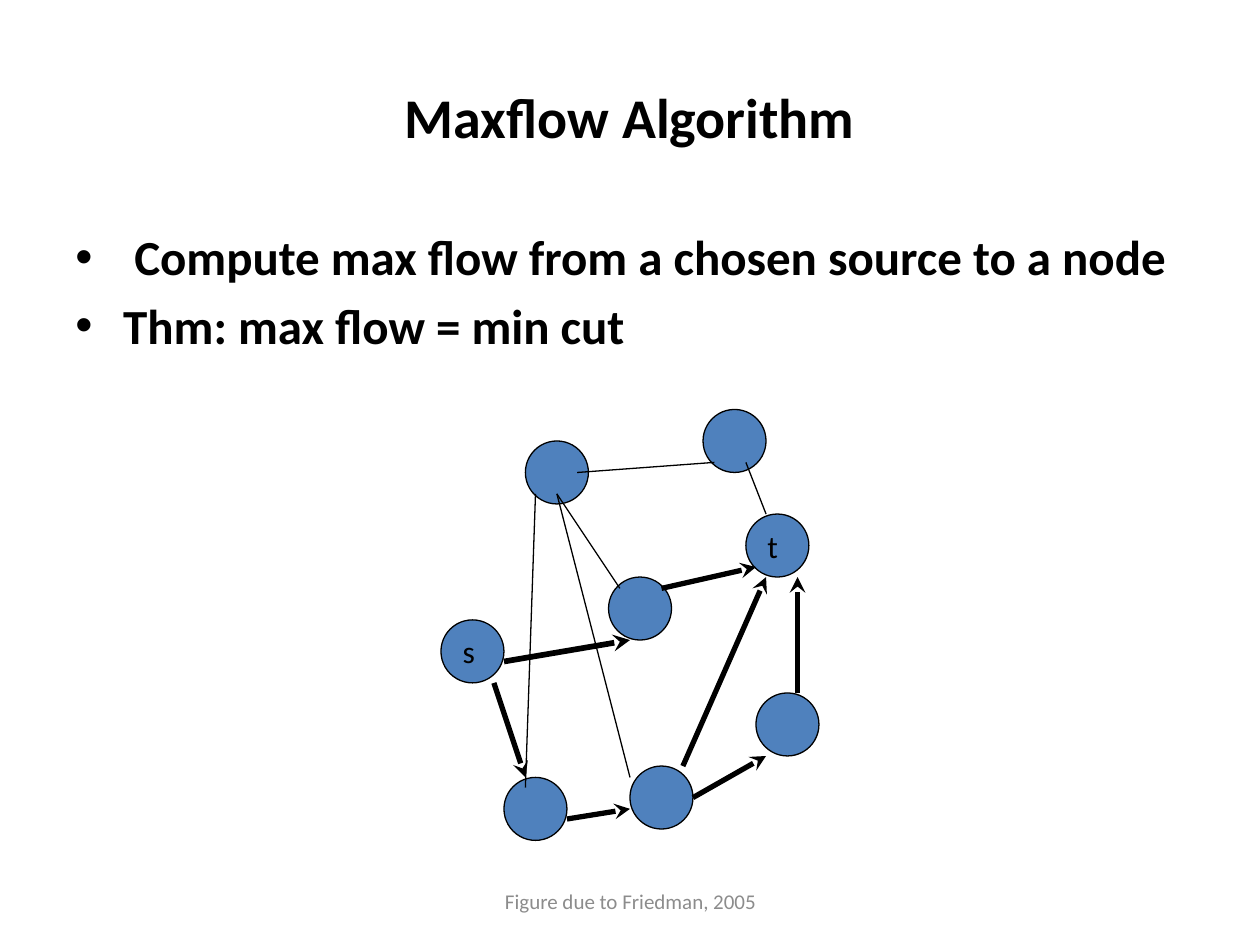
import dataclasses

import lxml.etree
import pptx
import pptx.dml.color
import pptx.enum.shapes
import pptx.enum.text
import pptx.oxml.ns
import pptx.util

Inches = pptx.util.Inches
Pt = pptx.util.Pt
ALIGN = pptx.enum.text.PP_ALIGN
ANCHOR = pptx.enum.text.MSO_ANCHOR


@dataclasses.dataclass(frozen=True)
class Theme:
    font: str = "Calibri"
    ink: str = "000000"
    node: str = "4F81BD"
    muted: str = "8C8C8C"
    title: int = 32
    body: int = 28
    label: int = 18
    caption: int = 12
    thin: float = 0.75
    thick: float = 3
    heavy: float = 3.25


THEME = Theme()
NODE_SIZE = 0.5
INDENT = 0.38

NODES = [
    (3.5, 4.92, "s"),
    (4.17, 3.5, ""),
    (4, 6.17, ""),
    (5.92, 4.08, "t"),
    (5, 6.08, ""),
    (4.83, 4.58, ""),
    (6, 5.5, ""),
    (5.58, 3.25, ""),
]
EDGES = [
    ((4.58, 3.75), (5.67, 3.67)),
    ((4.42, 3.92), (4.92, 4.67)),
    ((4.42, 3.92), (5, 6.17)),
    ((4.25, 3.92), (4.17, 6.25)),
    ((5.92, 3.67), (6.08, 4.08)),
]
FLOWS = [
    ((4, 5.25), (5, 5.08), THEME.heavy),
    ((3.92, 5.42), (4.17, 6.17), THEME.thick),
    ((4.5, 6.5), (5, 6.42), THEME.thick),
    ((5.42, 6.08), (6.08, 4.58), THEME.thick),
    ((5.5, 6.33), (6.08, 6), THEME.thick),
    ((6.33, 5.5), (6.33, 4.58), THEME.thick),
    ((5.25, 4.67), (6, 4.5), THEME.thick),
]


def rgb(color):
    return pptx.dml.color.RGBColor.from_string(color)


def set_attrs(obj, values):
    for name, value in values.items():
        setattr(obj, name, value)


def sub(parent, tag, **attrs):
    return lxml.etree.SubElement(parent, pptx.oxml.ns.qn(tag), attrs)


def write(p, text, size, color=THEME.ink, bold=False, align=ALIGN.LEFT):
    p.alignment = align
    r = p.add_run()
    r.text = text
    set_attrs(r.font, {"name": THEME.font, "size": Pt(size), "bold": bold})
    r.font.color.rgb = rgb(color)


def hang(p):
    pPr = p._p.get_or_add_pPr()
    pPr.set("marL", str(Inches(INDENT)))
    pPr.set("indent", str(Inches(-INDENT)))
    return pPr


def add_box(s, box, anchor):
    tf = s.shapes.add_textbox(*map(Inches, box)).text_frame
    set_attrs(tf, {"word_wrap": True, "vertical_anchor": anchor})
    return tf


def add_centred(s, box, text, size, **style):
    tf = add_box(s, box, ANCHOR.MIDDLE)
    write(tf.paragraphs[0], text, size, align=ALIGN.CENTER, **style)


def add_bullets(s, box, items):
    tf = add_box(s, box, ANCHOR.TOP)
    for i, text in enumerate(items):
        p = tf.add_paragraph() if i else tf.paragraphs[0]
        write(p, text, THEME.body, bold=True)
        pPr = hang(p)
        sub(sub(pPr, "a:spcBef"), "a:spcPct", val="20000")
        sub(pPr, "a:buFont", typeface="Arial")
        sub(pPr, "a:buChar", char="•")


def add_node(s, x, y, label):
    sp = s.shapes.add_shape(
        pptx.enum.shapes.MSO_SHAPE.OVAL, *map(Inches, (x, y, NODE_SIZE, NODE_SIZE)))
    sp.shadow.inherit = False
    sp.fill.solid()
    sp.fill.fore_color.rgb = rgb(THEME.node)
    sp.line.color.rgb = rgb(THEME.ink)
    sp.line.width = Pt(THEME.thin)
    if label:
        tf = sp.text_frame
        set_attrs(tf, {"word_wrap": False, "vertical_anchor": ANCHOR.MIDDLE})
        write(tf.paragraphs[0], label, THEME.label)
        hang(tf.paragraphs[0])


def add_edge(s, start, end, width=THEME.thin, arrow=False):
    c = s.shapes.add_connector(
        pptx.enum.shapes.MSO_CONNECTOR.STRAIGHT, *map(Inches, start + end))
    c.line.color.rgb = rgb(THEME.ink)
    c.line.width = Pt(width)
    if arrow:
        sub(c.line._get_or_add_ln(), "a:tailEnd", type="stealth")
    sub(c._element.spPr, "a:effectLst")


def main():
    prs = pptx.Presentation()
    set_attrs(prs, {"slide_width": Inches(10), "slide_height": Inches(7.5)})
    s = prs.slides.add_slide(prs.slide_layouts[6])
    add_centred(s, (0.5, 0.3, 9, 1.25), "Maxflow Algorithm", THEME.title, bold=True)
    add_bullets(s, (0.5, 1.75, 9, 1.25), [
        " Compute max flow from a chosen source to a node",
        "Thm: max flow = min cut",
    ])
    for node in NODES:
        add_node(s, *node)
    for edge in EDGES:
        add_edge(s, *edge)
    for flow in FLOWS:
        add_edge(s, *flow, arrow=True)
    add_centred(s, (3.42, 6.95, 3.17, 0.4), "Figure due to Friedman, 2005",
                THEME.caption, color=THEME.muted)
    prs.save("out.pptx")


if __name__ == "__main__":
    main()
